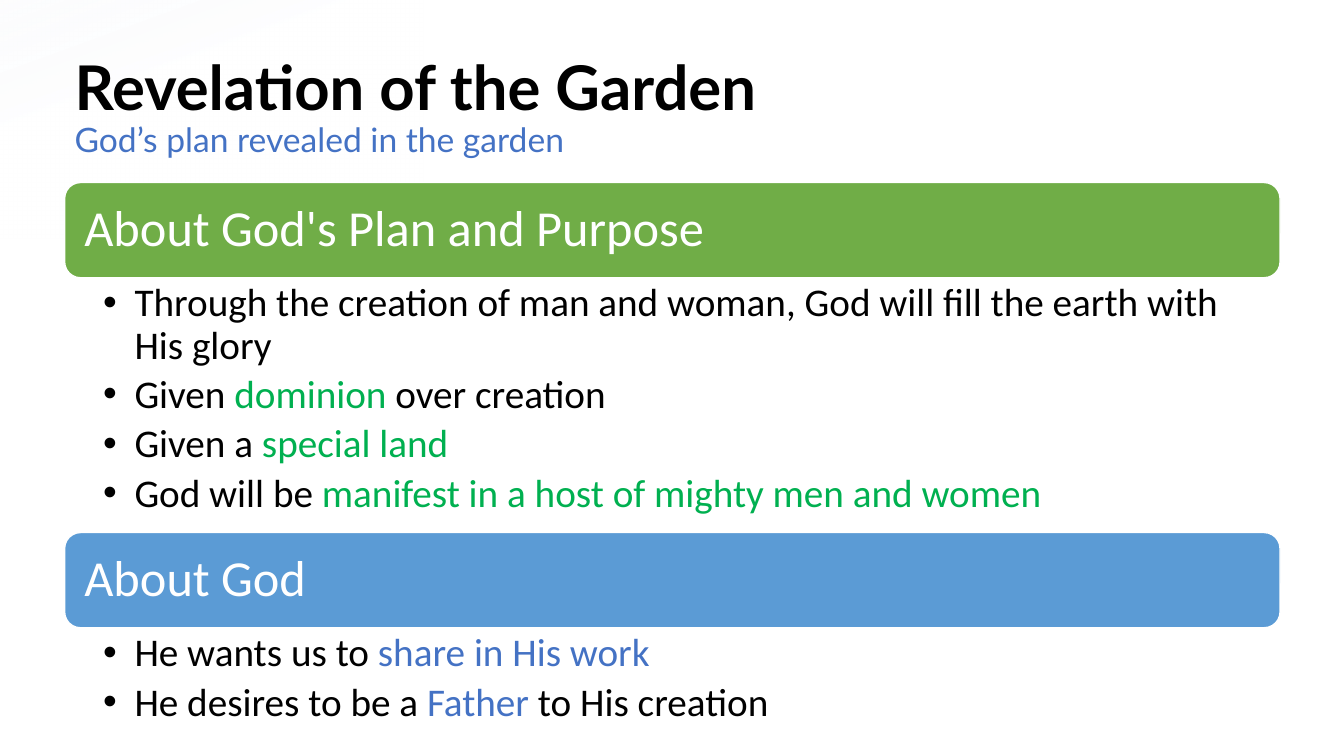
from lxml.etree import SubElement
from pptx import Presentation
from pptx.dml.color import RGBColor
from pptx.enum.shapes import MSO_SHAPE
from pptx.enum.text import MSO_ANCHOR, MSO_AUTO_SIZE, PP_ALIGN
from pptx.oxml.ns import qn
from pptx.util import Cm, Pt

BLACK, WHITE, BLUE, GREEN = "000000", "FFFFFF", "4472C4", "00B050"
LEFT, WIDTH, HEADER_H = 1.63, 30.63, 2.4

SECTIONS = [
    ("About God's Plan and Purpose", "70AD47", GREEN, 6.42, [
        ["Through the creation of man and woman, God will fill the earth with His glory"],
        ["Given ", "dominion", " over creation"],
        ["Given a ", "special land"],
        ["God will be ", "manifest in a host of mighty men and women"],
    ]),
    ("About God", "5B9BD5", BLUE, 2.69, [
        ["He wants us to ", "share in His work"],
        ["He desires to be a ", "Father", " to His creation"],
    ]),
]


def rgb(value):
    return RGBColor.from_string(value)


def apply(target, values):
    for name, value in values.items():
        setattr(target, name, value)


def place(sp, x, y, w, h):
    apply(sp, {"left": Cm(x), "top": Cm(y), "width": Cm(w), "height": Cm(h)})


def set_frame(tf, anchor, left, top, right, bottom):
    apply(tf, {
        "word_wrap": True, "auto_size": MSO_AUTO_SIZE.NONE, "vertical_anchor": anchor,
        "margin_left": Cm(left), "margin_top": Cm(top),
        "margin_right": Cm(right), "margin_bottom": Cm(bottom),
    })


def set_paragraph(p, after=0):
    apply(p, {"alignment": PP_ALIGN.LEFT, "line_spacing": 0.9,
              "space_before": Pt(0), "space_after": Pt(after)})


def add_run(p, text, size, color, font="Calibri", bold=False):
    r = p.add_run()
    r.text = text
    apply(r.font, {"size": Pt(size), "name": font, "bold": bold})
    r.font.color.rgb = rgb(color)


def add_bullet(p):
    pPr = p._p.get_or_add_pPr()
    pPr.set("marL", str(Cm(0.79)))
    pPr.set("indent", str(Cm(-0.79)))
    SubElement(pPr, qn("a:buFont"), typeface="Arial")
    SubElement(pPr, qn("a:buChar"), char="•")


def add_corner_glow(s, x, y, w, h):
    sp = s.shapes.add_shape(MSO_SHAPE.RECTANGLE, Cm(x), Cm(y), Cm(w), Cm(h))
    sp.shadow.inherit = False
    sp.line.fill.background()
    sp.fill.gradient()
    sp.fill.gradient_angle = 290
    stops = sp._element.spPr.find(qn("a:gradFill")).find(qn("a:gsLst"))
    for stop in list(stops):
        stops.remove(stop)
    for pos, color, alpha in [(0, "F6F8FC", 25), (34, WHITE, 70), (53, WHITE, 85), (67, WHITE, 100)]:
        stop = SubElement(stops, qn("a:gs"), pos=str(pos * 1000))
        clr = SubElement(stop, qn("a:srgbClr"), val=color)
        SubElement(clr, qn("a:alpha"), val=str(alpha * 1000))
    s.shapes._spTree.insert(2, sp._element)


def fill_title(sp, x, y, w, h):
    place(sp, x, y, w, h)
    tf = sp.text_frame
    set_frame(tf, MSO_ANCHOR.MIDDLE, 0.25, 0.13, 0.25, 0.13)
    p = tf.paragraphs[0]
    set_paragraph(p)
    add_run(p, "Revelation of the Garden", 44, BLACK, "Lato", True)
    p.add_line_break()
    add_run(p, "God’s plan revealed in the garden", 24, BLUE, "Lato")


def add_header(s, text, fill, x, y, w, h):
    sp = s.shapes.add_shape(MSO_SHAPE.ROUNDED_RECTANGLE, Cm(x), Cm(y), Cm(w), Cm(h))
    sp.shadow.inherit = False
    sp.fill.solid()
    sp.fill.fore_color.rgb = rgb(fill)
    sp.line.color.rgb = rgb(WHITE)
    sp.line.width = Pt(1)
    set_frame(sp.text_frame, MSO_ANCHOR.MIDDLE, 0.38, 0.38, 0.38, 0.38)
    p = sp.text_frame.paragraphs[0]
    set_paragraph(p)
    add_run(p, text, 36, WHITE)


def fill_list(sp, items, accent, x, y, w, h):
    place(sp, x, y, w, h)
    tf = sp.text_frame
    set_frame(tf, MSO_ANCHOR.TOP, 0.97, 0.13, 0.71, 0.13)
    for i, parts in enumerate(items):
        p = tf.add_paragraph() if i else tf.paragraphs[0]
        p.level = 1
        set_paragraph(p, 5)
        add_bullet(p)
        for j, text in enumerate(parts):
            add_run(p, text, 28, accent if j == 1 else BLACK)


def main():
    prs = Presentation()
    apply(prs, {"slide_width": Cm(33.87), "slide_height": Cm(19.05)})
    s = prs.slides.add_slide(prs.slide_layouts[3])
    add_corner_glow(s, 0, 0, 10.67, 6.02)
    fill_title(s.shapes.title, LEFT, 0.89, WIDTH, 3.68)
    y = 4.6
    for idx, (heading, fill, accent, list_h, items) in enumerate(SECTIONS, 1):
        add_header(s, heading, fill, LEFT, y, WIDTH, HEADER_H)
        y += HEADER_H
        fill_list(s.placeholders[idx], items, accent, LEFT, y, WIDTH, list_h)
        y += list_h
    prs.save("out.pptx")


if __name__ == "__main__":
    main()
